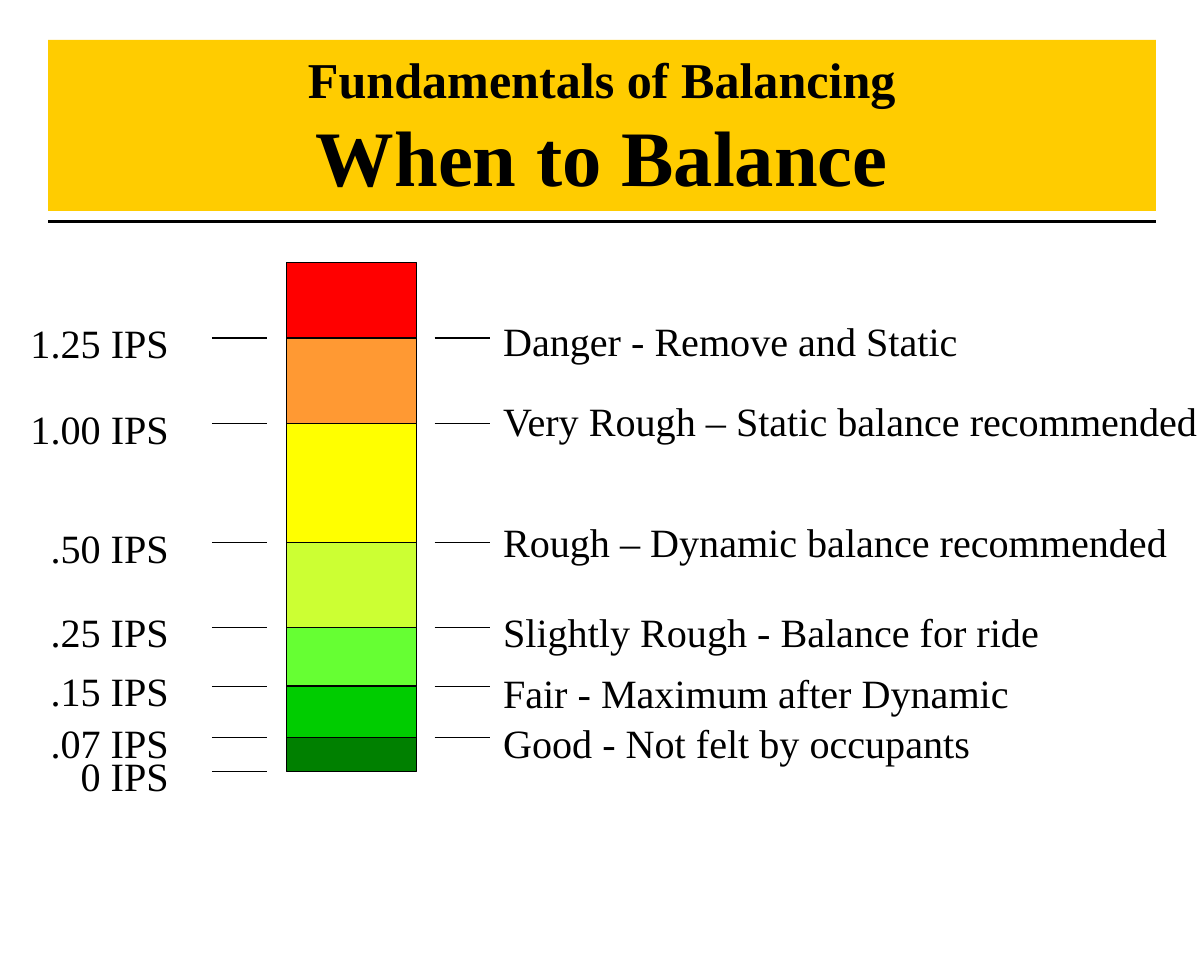
import copy

import pptx
import pptx.dml.color
import pptx.enum.shapes
import pptx.enum.text
import pptx.oxml.ns
import pptx.util
import lxml.etree

WIDTH, HEIGHT = pptx.util.Inches(10), pptx.util.Inches(8)
FONT = "Times New Roman"
COLOURS = {
    "ink": "000000", "banner": "FFCC00",
    "red": "FF0000", "orange": "FF9933", "yellow": "FFFF00", "lime": "CCFF33",
    "light green": "66FF33", "green": "00CC00", "dark green": "008000",
}

# Columns: left edge and width, in percent of the slide width
BANNER = (4, 92)
LABELS = (1.5, 13.5)
LEFT_TICKS = (17.6, 4.6)
BAR = (23.8, 10.8)
RIGHT_TICKS = (36.1, 4.6)
DESCRIPTION_LEFT = 40.8

# Rows, in percent of the slide height
SCALE_TOP = 27.25
LABEL_RISE = 2.65
TEXT_HEIGHT = 6.25

# Band colour, lower edge, label, description, its top and its width
LEVELS = [
    ("red", 35.1, "1.25 IPS", "Danger - Remove and Static", 32.25, 39.7),
    ("orange", 44, "1.00 IPS", "Very Rough – Static balance recommended", 40.6, 59),
    ("yellow", 56.35, ".50 IPS", "Rough – Dynamic balance recommended", 53.1, 57.7),
    ("lime", 65.15, ".25 IPS", "Slightly Rough - Balance for ride", 62.5, 46.5),
    ("light green", 71.25, ".15 IPS", "Fair - Maximum after Dynamic", 68.75, 44),
    ("green", 76.6, ".07 IPS", "Good - Not felt by occupants", 74, 41.2),
    ("dark green", 80.1, "0 IPS", None, None, None),
]


def across(percent):
    return round(WIDTH * percent / 100)


def down(percent):
    return round(HEIGHT * percent / 100)


def colour(name):
    return pptx.dml.color.RGBColor.from_string(COLOURS[name])


def format_run(run, size, bold=False):
    run.font.name = FONT
    run.font.size = pptx.util.Pt(size)
    run.font.bold = bold
    run.font.color.rgb = colour("ink")


def add_title(page, lines, sizes):
    title = page.shapes.title
    title.left, title.width = map(across, BANNER)
    title.top, title.height = down(4.15), down(17.75)
    title.fill.solid()
    title.fill.fore_color.rgb = colour("banner")
    frame = title.text_frame
    frame.text = "\v".join(lines)
    frame.auto_size = pptx.enum.text.MSO_AUTO_SIZE.NONE
    frame.vertical_anchor = pptx.enum.text.MSO_ANCHOR.MIDDLE
    para = frame.paragraphs[0]
    para.alignment = pptx.enum.text.PP_ALIGN.CENTER
    for run, size in zip(para.runs, sizes):
        format_run(run, size, bold=True)
    # The line break takes the size of the first line
    line_break = para._p.find(pptx.oxml.ns.qn("a:br"))
    line_break.append(copy.deepcopy(para.runs[0]._r.rPr))


def add_rule(page, column, row, weight=0.75):
    left, width = column
    rule = page.shapes.add_connector(
        pptx.enum.shapes.MSO_CONNECTOR.STRAIGHT,
        across(left), down(row), across(left + width), down(row))
    rule.line.color.rgb = colour("ink")
    rule.line.width = pptx.util.Pt(weight)
    lxml.etree.SubElement(rule._element.spPr, pptx.oxml.ns.qn("a:effectLst"))


def add_band(page, top, bottom, fill):
    left, width = BAR
    band = page.shapes.add_shape(
        pptx.enum.shapes.MSO_SHAPE.RECTANGLE,
        across(left), down(top), across(width), down(bottom - top))
    band.shadow.inherit = False
    band.fill.solid()
    band.fill.fore_color.rgb = colour(fill)
    band.line.color.rgb = colour("ink")
    band.line.width = pptx.util.Pt(0.75)


def add_text(page, text, left, top, width, align):
    box = page.shapes.add_textbox(
        across(left), down(top), across(width), down(TEXT_HEIGHT))
    frame = box.text_frame
    frame.word_wrap = False
    frame.margin_right = 0 if align == pptx.enum.text.PP_ALIGN.LEFT else across(1)
    frame.text = text
    para = frame.paragraphs[0]
    para.alignment = align
    format_run(para.runs[0], 24)


def main():
    deck = pptx.Presentation()
    deck.slide_width, deck.slide_height = WIDTH, HEIGHT
    page = deck.slides.add_slide(deck.slide_layouts[5])

    # Heading
    add_rule(page, BANNER, 23, weight=1.5)
    add_title(page, ["Fundamentals of Balancing", "When to Balance"], [30, 47])

    # Vibration scale: each level closes its band from below
    band_top = SCALE_TOP
    for fill, edge, label, description, text_top, text_width in LEVELS:
        add_band(page, band_top, edge, fill)
        add_rule(page, LEFT_TICKS, edge)
        add_text(page, label, LABELS[0], edge - LABEL_RISE, LABELS[1],
                 pptx.enum.text.PP_ALIGN.RIGHT)
        if description:
            add_rule(page, RIGHT_TICKS, edge)
            add_text(page, description, DESCRIPTION_LEFT, text_top, text_width,
                     pptx.enum.text.PP_ALIGN.LEFT)
        band_top = edge

    deck.save("out.pptx")


if __name__ == "__main__":
    main()
